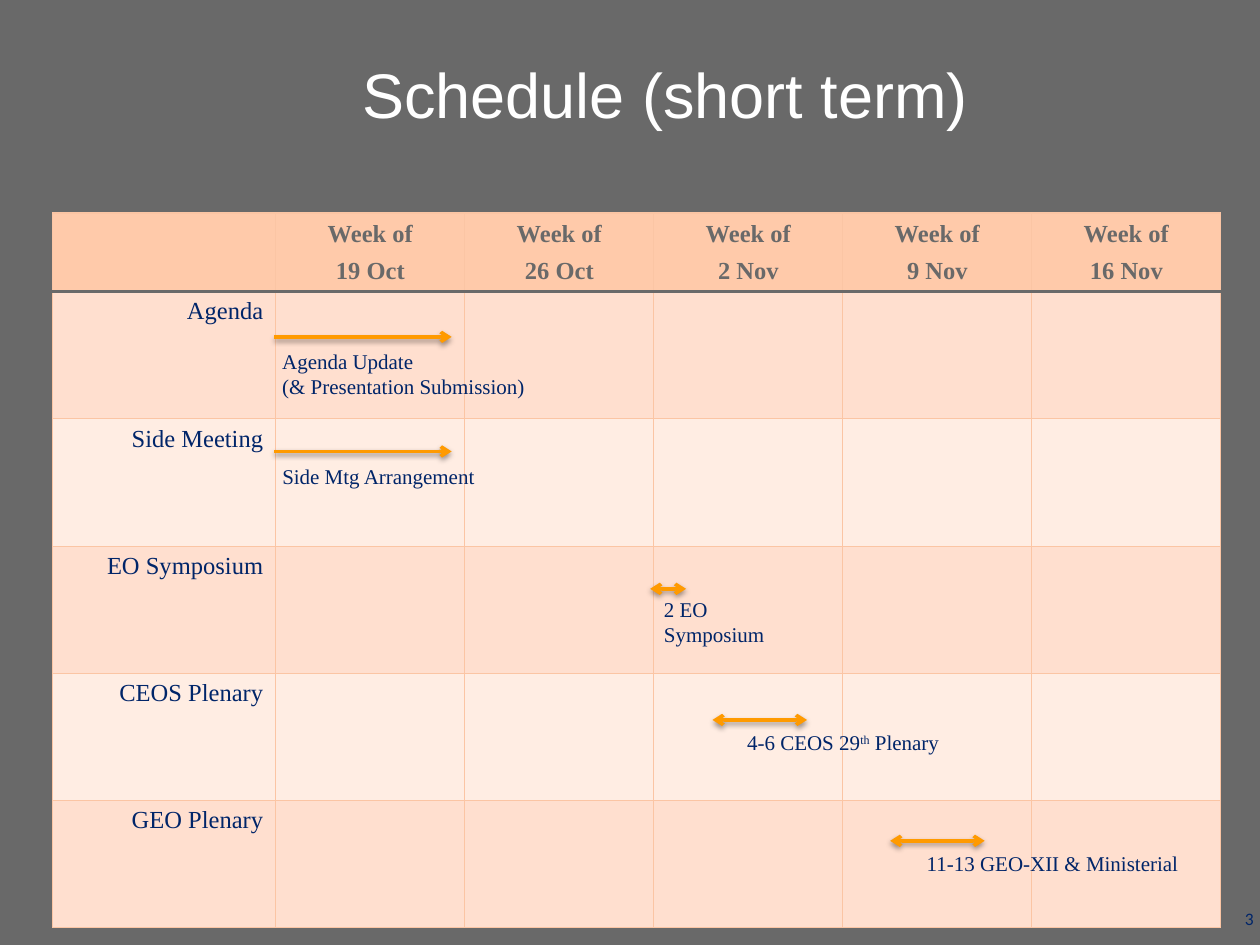
"""Build the short-term schedule slide: a week grid with arrows and captions."""
from lxml import etree
from pptx import Presentation
from pptx import util as u
from pptx.dml.color import RGBColor
from pptx.enum import shapes, text
from pptx.oxml import parse_xml
from pptx.oxml.ns import nsdecls, qn

COLORS = {
    "page": "696969", "white": "FFFFFF", "navy": "002569", "arrow": "FF9A00",
    "header": "FFCAAA", "dark band": "FFDFCF", "light band": "FFEDE3",
    "border": "FBC5A4",
}
SERIF = "Times New Roman"
LEFT, TOP = 0.42, 1.69
LABEL_WIDTH, WEEK_WIDTH = 1.77, 1.5
HEADER_HEIGHT, ROW_HEIGHT = 0.61, 1.01
GRID_LEFT, GRID_TOP = LEFT + LABEL_WIDTH, TOP + HEADER_HEIGHT

weeks = ["19 Oct", "26 Oct", "2 Nov", "9 Nov", "16 Nov"]
tracks = ["Agenda", "Side Meeting", "EO Symposium", "CEOS Plenary", "GEO Plenary"]
# Positions count weeks across and rows down from the first body cell.
events = [
    {"arrow": (-0.01, 0.93, 0.37), "both": False, "caption": (0, 0.41), "size": (2.37, 0.5),
     "lines": [["Agenda Update"], ["(& Presentation Submission)"]]},
    {"arrow": (-0.01, 0.93, 1.27), "both": False, "caption": (0, 1.32), "size": (1.78, 0.3),
     "lines": [["Side Mtg Arrangement"]]},
    {"arrow": (1.98, 2.17, 2.35), "both": True, "caption": (2.02, 2.36), "size": (1, 0.5),
     "lines": [["2 EO Symposium"]]},
    {"arrow": (2.31, 2.81, 3.38), "both": True, "caption": (2.46, 3.41), "size": (1.87, 0.3),
     "lines": [["4-6 CEOS 29", "th", " Plenary"]]},
    {"arrow": (3.25, 3.75, 4.33), "both": True, "caption": (3.41, 4.36), "size": (2.37, 0.3),
     "lines": [["11-13 GEO-XII & Ministerial"]]},
]


def add_span(para, words, size, color, font=SERIF, bold=False):
    """Add one formatted run to a paragraph."""
    span = para.add_run()
    span.text = words
    span.font.size, span.font.name, span.font.bold = u.Pt(size), font, bold
    span.font.color.rgb = RGBColor.from_string(COLORS[color])
    return span


def add_box(left, top, width, height):
    """Add a wrapping text box with narrow margins and return its frame."""
    box = page.shapes.add_textbox(u.Inches(left), u.Inches(top), u.Inches(width), u.Inches(height))
    frame = box.text_frame
    frame.word_wrap = True
    frame.margin_left = frame.margin_right = u.Inches(0.05)
    frame.margin_top = frame.margin_bottom = u.Inches(0.05)
    return frame


deck = Presentation()
deck.slide_width, deck.slide_height = u.Inches(10), u.Inches(7.5)
page = deck.slides.add_slide(deck.slide_layouts[5])
page.background.fill.solid()
page.background.fill.fore_color.rgb = RGBColor.from_string(COLORS["page"])

title = page.shapes.title
title.left, title.top = u.Inches(0.81), u.Inches(0.39)
title.width, title.height = u.Inches(8.94), u.Inches(0.6)
title.text_frame.vertical_anchor = text.MSO_ANCHOR.TOP
title.text_frame.auto_size = text.MSO_AUTO_SIZE.NONE
title.text_frame.paragraphs[0].alignment = text.PP_ALIGN.CENTER
add_span(title.text_frame.paragraphs[0], "Schedule (short term)", 36, "white", "Arial")

number = add_box(7.92, 7.16, 2.08, 0.28).paragraphs[0]
number.alignment = text.PP_ALIGN.RIGHT
add_span(number, "3", 10, "navy", "Calibri")

grid = page.shapes.add_table(
    len(tracks) + 1, len(weeks) + 1, u.Inches(LEFT), u.Inches(TOP),
    u.Inches(LABEL_WIDTH + len(weeks) * WEEK_WIDTH),
    u.Inches(HEADER_HEIGHT + len(tracks) * ROW_HEIGHT)).table
for index, column in enumerate(grid.columns):
    column.width = u.Inches(WEEK_WIDTH if index else LABEL_WIDTH)
for index, row in enumerate(grid.rows):
    row.height = u.Inches(ROW_HEIGHT if index else HEADER_HEIGHT)
    band = ("light band", "dark band")[index % 2] if index else "header"
    for cell in row.cells:
        properties = cell._tc.get_or_add_tcPr()
        for side in "LRTB":
            rule = (index == 0 and side == "B") or (index == 1 and side == "T")
            color, width = ("page", 2) if rule else ("border", 0.75)
            properties.append(parse_xml(
                f'<a:ln{side} {nsdecls("a")} w="{u.Pt(width)}"><a:solidFill>'
                f'<a:srgbClr val="{COLORS[color]}"/></a:solidFill></a:ln{side}>'))
        cell.fill.solid()
        cell.fill.fore_color.rgb = RGBColor.from_string(COLORS[band])

for column, week in enumerate(weeks, start=1):
    cell = grid.cell(0, column)
    cell.vertical_anchor = text.MSO_ANCHOR.MIDDLE
    cell.margin_top = cell.margin_bottom = u.Inches(0.04)
    first, second = cell.text_frame.paragraphs[0], cell.text_frame.add_paragraph()
    second.space_before = u.Pt(5.6)
    for para, words in ((first, "Week of"), (second, week)):
        para.alignment = text.PP_ALIGN.CENTER
        add_span(para, words, 14, "page", bold=True)

for row, track in enumerate(tracks, start=1):
    para = grid.cell(row, 0).text_frame.paragraphs[0]
    para.alignment = text.PP_ALIGN.RIGHT
    add_span(para, track, 14, "navy")

for event in events:
    start, end, level = event["arrow"]
    height = u.Inches(GRID_TOP + level * ROW_HEIGHT)
    arrow = page.shapes.add_connector(
        shapes.MSO_CONNECTOR.STRAIGHT, u.Inches(GRID_LEFT + start * WEEK_WIDTH), height,
        u.Inches(GRID_LEFT + end * WEEK_WIDTH), height)
    arrow.line.color.rgb = RGBColor.from_string(COLORS["arrow"])
    arrow.line.width = u.Pt(2)
    for tip in ("headEnd", "tailEnd") if event["both"] else ("tailEnd",):
        etree.SubElement(arrow.line._get_or_add_ln(), qn(f"a:{tip}"), type="arrow")
    arrow._element.spPr.append(parse_xml(
        f'<a:effectLst {nsdecls("a")}><a:outerShdw blurRad="{u.Pt(3)}" dist="{u.Pt(1.6)}" '
        'dir="5400000" rotWithShape="0"><a:srgbClr val="000000"><a:alpha val="38000"/>'
        '</a:srgbClr></a:outerShdw></a:effectLst>'))

    week, level = event["caption"]
    frame = add_box(GRID_LEFT + week * WEEK_WIDTH, GRID_TOP + level * ROW_HEIGHT, *event["size"])
    for index, line in enumerate(event["lines"]):
        para = frame.add_paragraph() if index else frame.paragraphs[0]
        for words in line:
            span = add_span(para, words, 12, "navy")
            if words == "th":
                span.font._element.set("baseline", "30000")

deck.save("out.pptx")
